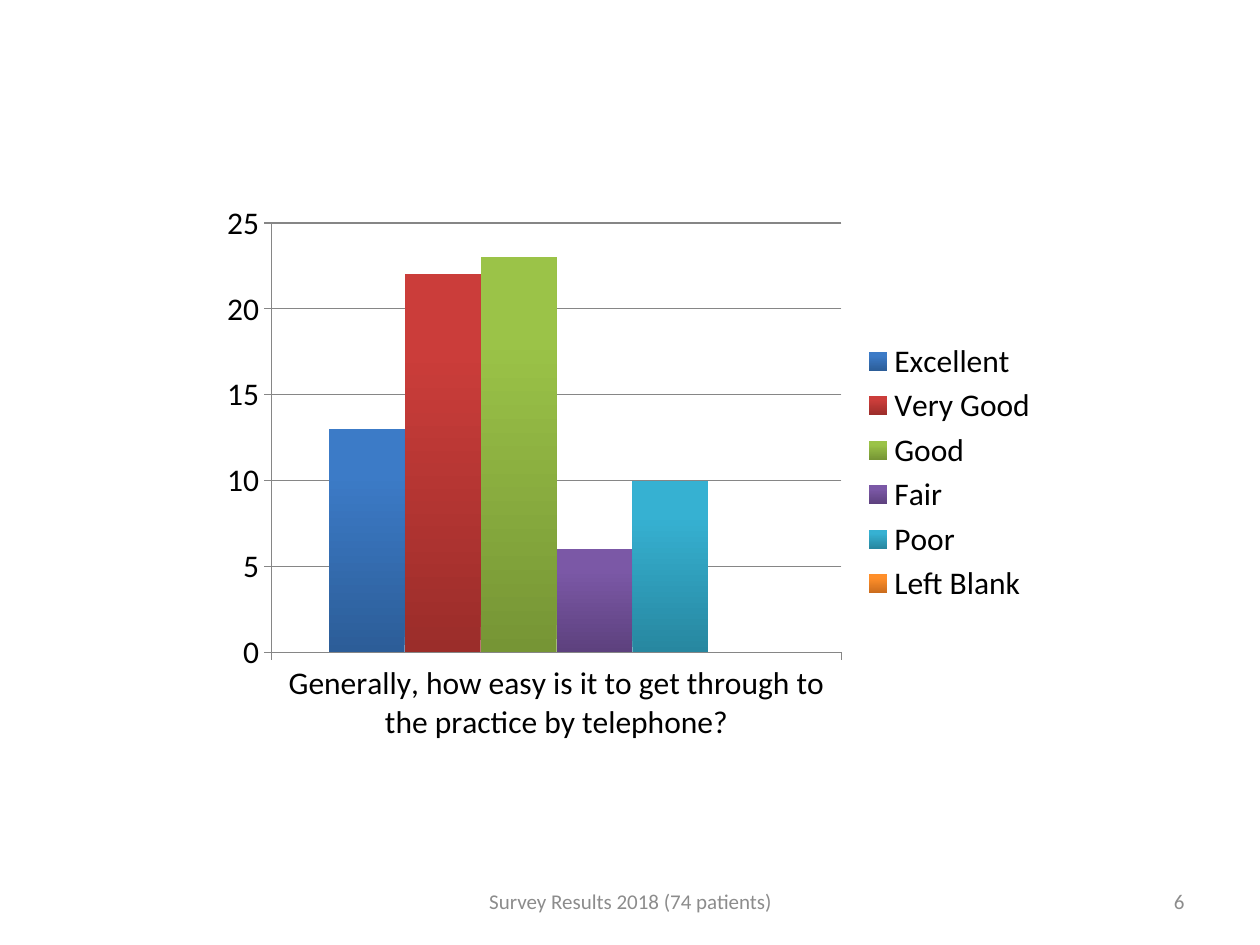
from pptx import Presentation
from pptx.chart.data import CategoryChartData
from pptx.dml.color import RGBColor
from pptx.enum.chart import XL_CHART_TYPE as ChartType, XL_LEGEND_POSITION as LegendPosition
from pptx.enum.chart import XL_TICK_MARK as TickMark
from pptx.enum.text import MSO_ANCHOR as Anchor, PP_ALIGN as Align
from pptx.util import Inches, Pt

FONT = "Calibri"
GRID_COLOR = "868686"
FOOTER_COLOR = "8C8C8C"
QUESTION = "Generally, how easy is it to get through to the practice by telephone?"
# answer, patients, bar colour at the bottom, bar colour at the top
ANSWERS = [
    ("Excellent", 13, "2C5D98", "3C7BC7"),
    ("Very Good", 22, "9B2D2A", "CB3D3A"),
    ("Good", 23, "769535", "9BC348"),
    ("Fair", 6, "5D417E", "7B58A6"),
    ("Poor", 10, "2787A0", "36B1D2"),
    ("Left Blank", 0, "CB6C1D", "FF8F2A"),
]


def color(value):
    return RGBColor.from_string(value)


def style_font(font, size, value):
    font.name = FONT
    font.size = Pt(size)
    font.color.rgb = color(value)


def style_line(line):
    line.color.rgb = color(GRID_COLOR)
    line.width = Pt(0.75)


def fill_upward(fill, bottom, top):
    """Shade from the bottom colour to the top one, reached at 80 % of the height."""
    fill.gradient()
    fill.gradient_angle = 90
    for stop, position, value in zip(fill.gradient_stops, (0, 0.8), (bottom, top)):
        stop.position = position
        stop.color.rgb = color(value)


def add_answer_chart(page):
    data = CategoryChartData()
    data.categories = [QUESTION]
    for name, count, _, _ in ANSWERS:
        data.add_series(name, [count])
    chart = page.shapes.add_chart(
        ChartType.COLUMN_CLUSTERED,
        Inches(1.67), Inches(1.53), Inches(6.67), Inches(4.44), data,
    ).chart
    style_font(chart.font, 18, "000000")
    chart.has_title = False
    chart.has_legend = True
    chart.legend.position = LegendPosition.RIGHT
    chart.legend.include_in_layout = False

    for axis in (chart.category_axis, chart.value_axis):
        axis.major_tick_mark = TickMark.OUTSIDE
        axis.minor_tick_mark = TickMark.NONE
        style_line(axis.format.line)
    chart.value_axis.has_major_gridlines = True
    style_line(chart.value_axis.major_gridlines.format.line)

    plot = chart.plots[0]
    plot.gap_width = 150
    plot.overlap = 0
    plot.vary_by_categories = False
    for series, (_, _, bottom, top) in zip(plot.series, ANSWERS):
        fill_upward(series.format.fill, bottom, top)


def add_footer(page, text, left, width, align):
    box = page.shapes.add_textbox(Inches(left), Inches(6.95), Inches(width), Inches(0.4))
    frame = box.text_frame
    frame.word_wrap = True
    frame.vertical_anchor = Anchor.MIDDLE
    para = frame.paragraphs[0]
    para.text = text
    para.alignment = align
    style_font(para.font, 12, FOOTER_COLOR)


def main():
    deck = Presentation()
    deck.slide_width = Inches(10)
    deck.slide_height = Inches(7.5)
    page = deck.slides.add_slide(deck.slide_layouts[6])
    add_answer_chart(page)
    add_footer(page, "6", 7.17, 2.33, Align.RIGHT)
    add_footer(page, "Survey Results 2018 (74 patients)", 3.42, 3.17, Align.CENTER)
    deck.save("out.pptx")


if __name__ == "__main__":
    main()
